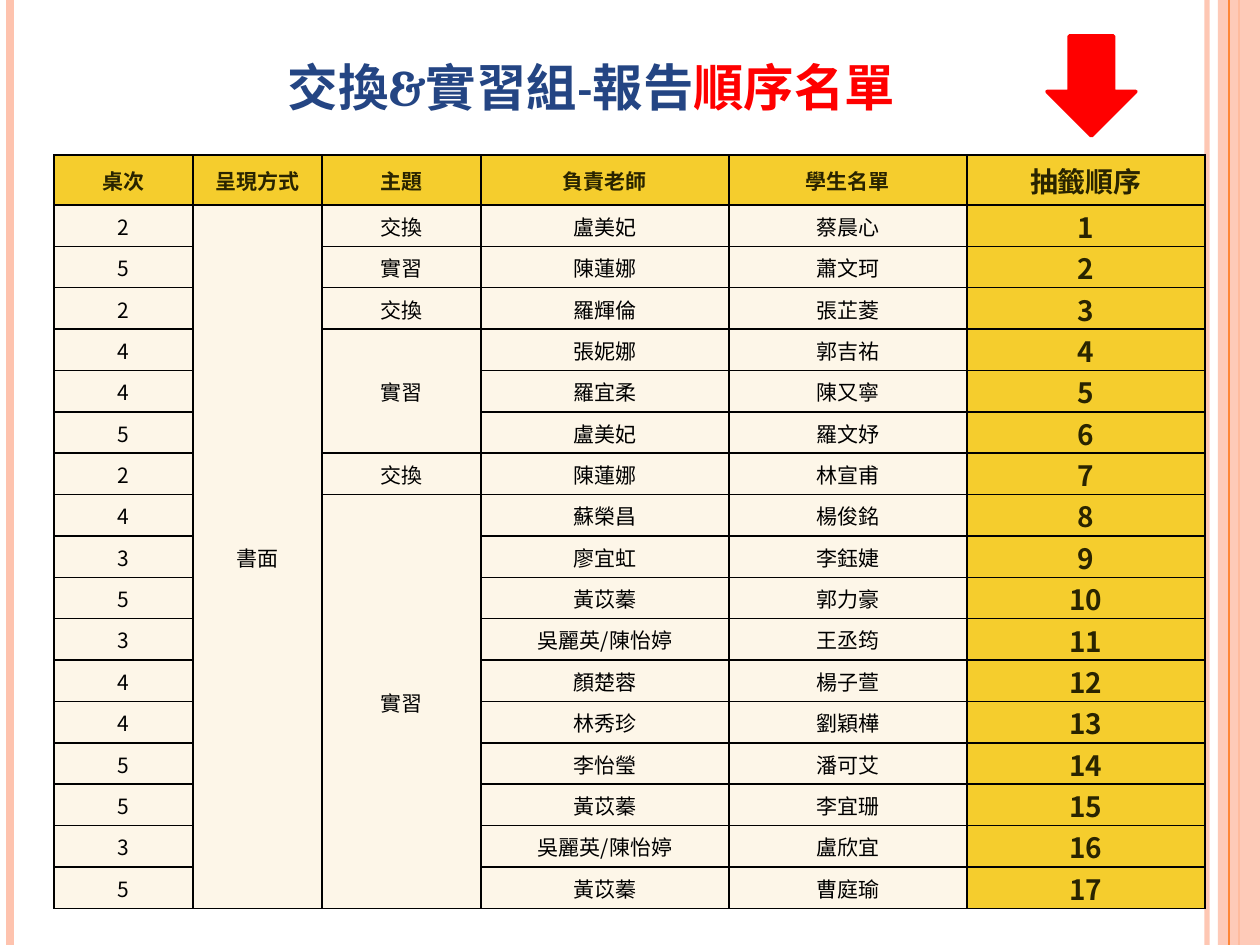
from lxml.etree import SubElement
from pptx import Presentation
from pptx.dml.color import RGBColor
from pptx.enum.shapes import MSO_CONNECTOR, MSO_SHAPE
from pptx.enum.text import MSO_ANCHOR, MSO_AUTO_SIZE, PP_ALIGN
from pptx.oxml.ns import qn
from pptx.util import Pt

SCALE = 914400 / 126
WIDTH, HEIGHT = 1260, 945
SANS, SERIF = "Noto Sans CJK SC", "Cambria"

PEACH = RGBColor(0xFE, 0xC3, 0xAE)
ORANGE = RGBColor(0xFE, 0x86, 0x37)
GOLD = RGBColor(0xF5, 0xCD, 0x2D)
CREAM = RGBColor(0xFD, 0xF6, 0xE8)
OLIVE = RGBColor(0x29, 0x24, 0x00)
BLACK = RGBColor(0, 0, 0)
NAVY = RGBColor(0x24, 0x45, 0x83)
RED = RGBColor(0xFF, 0, 0)

HEAD = ["桌次", "呈現方式", "主題", "負責老師", "學生名單", "抽籤順序"]
COLS = [139, 129, 159, 248, 238, 238]
# Table number, teacher, student, in drawn order
ROSTER = [
    ("2", "盧美妃", "蔡晨心"),
    ("5", "陳蓮娜", "蕭文珂"),
    ("2", "羅輝倫", "張芷菱"),
    ("4", "張妮娜", "郭吉祐"),
    ("4", "羅宜柔", "陳又寧"),
    ("5", "盧美妃", "羅文妤"),
    ("2", "陳蓮娜", "林宣甫"),
    ("4", "蘇榮昌", "楊俊銘"),
    ("3", "廖宜虹", "李鈺婕"),
    ("5", "黃苡蓁", "郭力豪"),
    ("3", "吳麗英/陳怡婷", "王丞筠"),
    ("4", "顏楚蓉", "楊子萱"),
    ("4", "林秀珍", "劉穎樺"),
    ("5", "李怡瑩", "潘可艾"),
    ("5", "黃苡蓁", "李宜珊"),
    ("3", "吳麗英/陳怡婷", "盧欣宜"),
    ("5", "黃苡蓁", "曹庭瑜"),
]
# Column, first row, rows covered, text
GROUPS = [
    (1, 1, 17, "書面"),
    (2, 1, 1, "交換"),
    (2, 2, 1, "實習"),
    (2, 3, 1, "交換"),
    (2, 4, 3, "實習"),
    (2, 7, 1, "交換"),
    (2, 8, 10, "實習"),
]


def px(n):
    return round(n * SCALE)


def fade(fill, percent):
    """Set the opacity of a solid fill element."""
    color = fill.find(qn("a:srgbClr"))
    SubElement(color, qn("a:alpha"), val=str(percent * 1000))


def style(font, size, color, bold, latin=SANS):
    font.size, font.bold, font.name = Pt(size), bold, latin
    font.color.rgb = color
    SubElement(font._element, qn("a:ea"), typeface=SANS)


class Board:
    def __init__(self, slide):
        self.slide = slide
        self.shapes = slide.shapes

    def rule(self, x, color, width, opacity=None):
        """Draw a vertical line down the whole slide."""
        line = self.shapes.add_connector(
            MSO_CONNECTOR.STRAIGHT, px(x), 0, px(x), px(HEIGHT))
        line.line.color.rgb, line.line.width = color, Pt(width)
        props = line._element.spPr
        if opacity:
            fade(props.find(qn("a:ln")).find(qn("a:solidFill")), opacity)
        SubElement(props, qn("a:effectLst"))

    def shape(self, kind, box, color, edge=None, opacity=None):
        item = self.shapes.add_shape(kind, *map(px, box))
        item.shadow.inherit = False
        item.fill.solid()
        item.fill.fore_color.rgb = color
        if opacity:
            fade(item._element.spPr.find(qn("a:solidFill")), opacity)
        if edge:
            item.line.color.rgb, item.line.width = color, Pt(edge)
        else:
            item.line.fill.background()

    def title(self, box, parts):
        item = self.shapes.title
        item.left, item.top, item.width, item.height = map(px, box)
        frame = item.text_frame
        frame.auto_size = MSO_AUTO_SIZE.NONE
        frame.vertical_anchor = MSO_ANCHOR.BOTTOM
        para = frame.paragraphs[0]
        para.alignment = PP_ALIGN.CENTER
        for text, color in parts:
            run = para.add_run()
            run.text = text
            style(run.font, 36, color, True, SERIF)
            run.font._element.set("cap", "small")

    def grid(self, left, top, cols, first, body, count):
        """Add an empty table: a first row, then count equal rows."""
        table = self.shapes.add_table(
            count + 1, len(cols), px(left), px(top),
            px(sum(cols)), px(first + body)).table
        for col, width in zip(table.columns, cols):
            col.width = px(width)
        for row in table.rows:
            row.height = px(body / count)
        table.rows[0].height = px(first)
        for r in range(count + 1):
            for c in range(len(cols)):
                strong = r == 0 or c == len(cols) - 1
                self.cell(table.cell(r, c), GOLD if strong else CREAM)
        return table

    def cell(self, cell, color):
        cell.margin_left = cell.margin_top = cell.margin_right = px(1)
        cell.margin_bottom = 0
        cell.vertical_anchor = MSO_ANCHOR.MIDDLE
        props = cell._tc.get_or_add_tcPr()
        for side in ("lnL", "lnR", "lnT", "lnB"):
            line = SubElement(props, qn("a:" + side), w=str(Pt(1)))
            fill = SubElement(line, qn("a:solidFill"))
            SubElement(fill, qn("a:srgbClr"), val=str(BLACK))
        cell.fill.solid()
        cell.fill.fore_color.rgb = color

    def label(self, cell, text, size=12, color=BLACK, bold=False):
        para = cell.text_frame.paragraphs[0]
        para.text = text
        para.alignment = PP_ALIGN.CENTER
        style(para.font, size, color, bold)


def main():
    deck = Presentation()
    deck.slide_width, deck.slide_height = px(WIDTH), px(HEIGHT)
    board = Board(deck.slides.add_slide(deck.slide_layouts[5]))

    board.rule(1207, PEACH, 3, 93)
    board.rule(10, PEACH, 4.5)
    board.rule(1239, ORANGE, 1.5)
    board.shape(MSO_SHAPE.RECTANGLE, (1218, 0, 42, HEIGHT), PEACH, opacity=87)
    board.rule(1229, ORANGE, 0.75)

    table = board.grid(54, 155, COLS, 50, 704, len(ROSTER))
    for c, text in enumerate(HEAD):
        size = 16 if c == len(HEAD) - 1 else 12
        board.label(table.cell(0, c), text, size, OLIVE, True)
    for r, (desk, teacher, student) in enumerate(ROSTER, 1):
        for c, text in ((0, desk), (3, teacher), (4, student)):
            board.label(table.cell(r, c), text)
        board.label(table.cell(r, 5), str(r), 16, OLIVE, True)
    for c, r, span, text in GROUPS:
        if span > 1:
            table.cell(r, c).merge(table.cell(r + span - 1, c))
        board.label(table.cell(r, c), text)

    board.title((77, 25, 1029, 100),
                [("交換&實習組-報告", NAVY), ("順序名單", RED)])
    board.shape(MSO_SHAPE.DOWN_ARROW, (1047, 36, 89, 100), RED, edge=2)
    deck.save("out.pptx")


if __name__ == "__main__":
    main()
